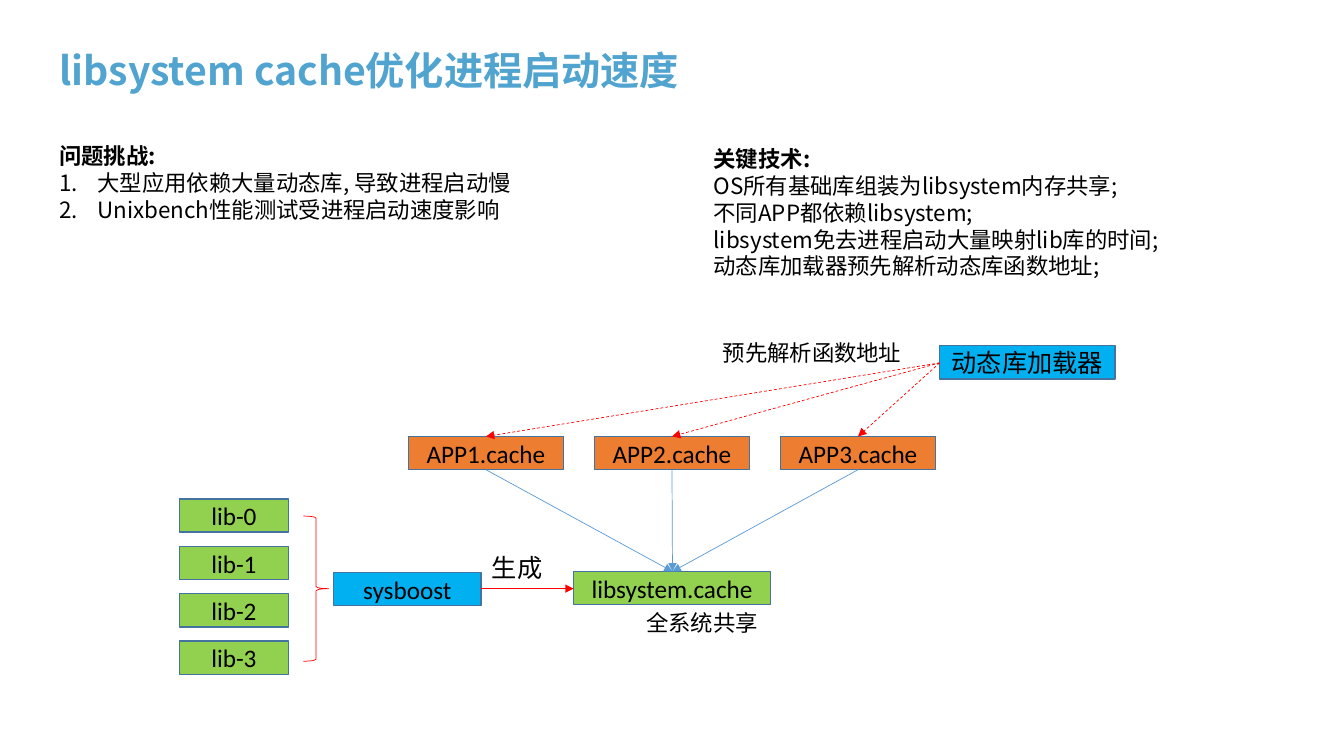
from lxml import etree
from pptx import Presentation
from pptx.dml.color import RGBColor
from pptx.enum.dml import MSO_LINE
from pptx.enum.shapes import MSO_CONNECTOR, MSO_SHAPE
from pptx.enum.text import MSO_ANCHOR, PP_ALIGN
from pptx.oxml.ns import qn
from pptx.util import Inches, Pt

RECTANGLE, BRACE = MSO_SHAPE.RECTANGLE, MSO_SHAPE.RIGHT_BRACE
STRAIGHT, DASH = MSO_CONNECTOR.STRAIGHT, MSO_LINE.DASH
MIDDLE, TOP = MSO_ANCHOR.MIDDLE, MSO_ANCHOR.TOP
CENTER, LEFT = PP_ALIGN.CENTER, PP_ALIGN.LEFT

COLORS = {
    "title": "51A4CF", "text": "000000", "border": "43739E",
    "app": "ED7D31", "library": "92D050", "tool": "00B0F0",
    "share": "5B9BD5", "flow": "FF0000",
}
BODY_FONT, LABEL_FONT = "Noto Sans CJK SC", "Calibri"
CELL = 0.1          # inches per grid column and row
BOX_ROWS = 3.3      # height of every labelled box


class Page:
    """Style and current slide; lengths are grid columns and rows."""

    def __init__(self, deck):
        self.shapes = deck.slides.add_slide(deck.slide_layouts[6]).shapes

    def grid(self, *cells):
        return [Inches(cell * CELL) for cell in cells]

    def color(self, name):
        return RGBColor.from_string(COLORS[name])

    def span(self, para, text, size, font, color="text", bold=False):
        run = para.add_run()
        run.text = text
        run.font.size, run.font.name, run.font.bold = Pt(size), font, bold
        run.font.color.rgb = self.color(color)
        east_asian = etree.SubElement(run.font._element, qn("a:ea"))
        east_asian.set("typeface", BODY_FONT)

    def text(self, at, lines, size=16, font=BODY_FONT, color="text",
             heading=False, numbered=False, wrap=True, anchor=TOP, spacing=None):
        frame = self.shapes.add_textbox(*self.grid(*at)).text_frame
        frame.word_wrap, frame.vertical_anchor = wrap, anchor
        for index, line in enumerate(lines):
            para = frame.add_paragraph() if index else frame.paragraphs[0]
            para.alignment = LEFT
            if spacing:
                para.line_spacing = spacing
            if numbered and index:
                self.number(para)
            self.span(para, line, size, font, color, heading and index == 0)

    def number(self, para):
        props = para._p.get_or_add_pPr()
        indent = Inches(0.38)
        props.set("marL", str(indent))
        props.set("indent", str(-indent))
        etree.SubElement(props, qn("a:buFont")).set("typeface", "+mj-lt")
        etree.SubElement(props, qn("a:buAutoNum")).set("type", "arabicPeriod")

    def box(self, left, top, width, label, fill):
        box = self.shapes.add_shape(RECTANGLE, *self.grid(left, top, width, BOX_ROWS))
        box.shadow.inherit = False
        box.fill.solid()
        box.fill.fore_color.rgb = self.color(fill)
        box.line.color.rgb = self.color("border")
        box.line.width = Pt(1)
        box.text_frame.word_wrap = True
        box.text_frame.vertical_anchor = MIDDLE
        para = box.text_frame.paragraphs[0]
        para.alignment = CENTER
        self.span(para, label, 18, LABEL_FONT)

    def brace(self, *at):
        brace = self.shapes.add_shape(BRACE, *self.grid(*at))
        brace.shadow.inherit = False
        brace.fill.background()
        brace.line.color.rgb = self.color("flow")
        brace.line.width = Pt(0.5)

    def arrow(self, start, end, color, dashed=False):
        arrow = self.shapes.add_connector(STRAIGHT, *self.grid(*start, *end))
        arrow.line.color.rgb = self.color(color)
        arrow.line.width = Pt(0.5)
        if dashed:
            arrow.line.dash_style = DASH
        etree.SubElement(arrow.line._get_or_add_ln(), qn("a:tailEnd")).set("type", "triangle")
        etree.SubElement(arrow._element.spPr, qn("a:effectLst"))


def main():
    deck = Presentation()
    deck.slide_width, deck.slide_height = Inches(13.33), Inches(7.5)
    page = Page(deck)

    # Title and the two text columns
    page.text((4.9, 3.7, 123.8, 7.1), ["libsystem cache优化进程启动速度"], size=28,
              color="title", heading=True, anchor=MIDDLE, spacing=0.9)
    page.text((4.9, 13.6, 48.3, 9.1), [
        "问题挑战:",
        "大型应用依赖大量动态库, 导致进程启动慢",
        "Unixbench性能测试受进程启动速度影响",
    ], heading=True, numbered=True)
    page.text((69.8, 13.9, 49.6, 14.5), [
        "关键技术:",
        "OS所有基础库组装为libsystem内存共享;",
        "不同APP都依赖libsystem;",
        "libsystem免去进程启动大量映射lib库的时间;",
        "动态库加载器预先解析动态库函数地址;",
    ], heading=True)

    # Libraries gathered by sysboost into the shared cache
    for index in range(4):
        page.box(17.8, 49.5 + 4.7 * index, 10.8, f"lib-{index}", "library")
    page.brace(30.1, 51.2, 2.5, 14.4)
    page.box(33.1, 56.8, 14.6, "sysboost", "tool")
    page.box(56.9, 56.7, 19.5, "libsystem.cache", "library")
    page.arrow((47.7, 58.4), (56.9, 58.4), "flow")

    # Loader resolves each app cache, which uses the shared cache
    loader, shared = (93.2, 36), (66.7, 56.7)
    app_top, app_width = 43.3, 15.4
    page.box(93.2, 34.3, 17.4, "动态库加载器", "tool")
    for index in range(3):
        left = 40.5 + 18.45 * index
        middle = left + app_width / 2
        page.box(left, app_top, app_width, f"APP{index + 1}.cache", "app")
        page.arrow((middle, app_top + BOX_ROWS), shared, "share")
        page.arrow(loader, (middle, app_top), "flow", dashed=True)

    # Labels beside the arrows and boxes
    page.text((47.8, 54.3, 7.1, 4), ["生成"], size=18, font=LABEL_FONT, wrap=False)
    page.text((63.1, 59.9, 13.2, 3.7), ["全系统共享"], wrap=False)
    page.text((70.7, 33.2, 20, 3.7), ["预先解析函数地址"], wrap=False)

    deck.save("out.pptx")


if __name__ == "__main__":
    main()
